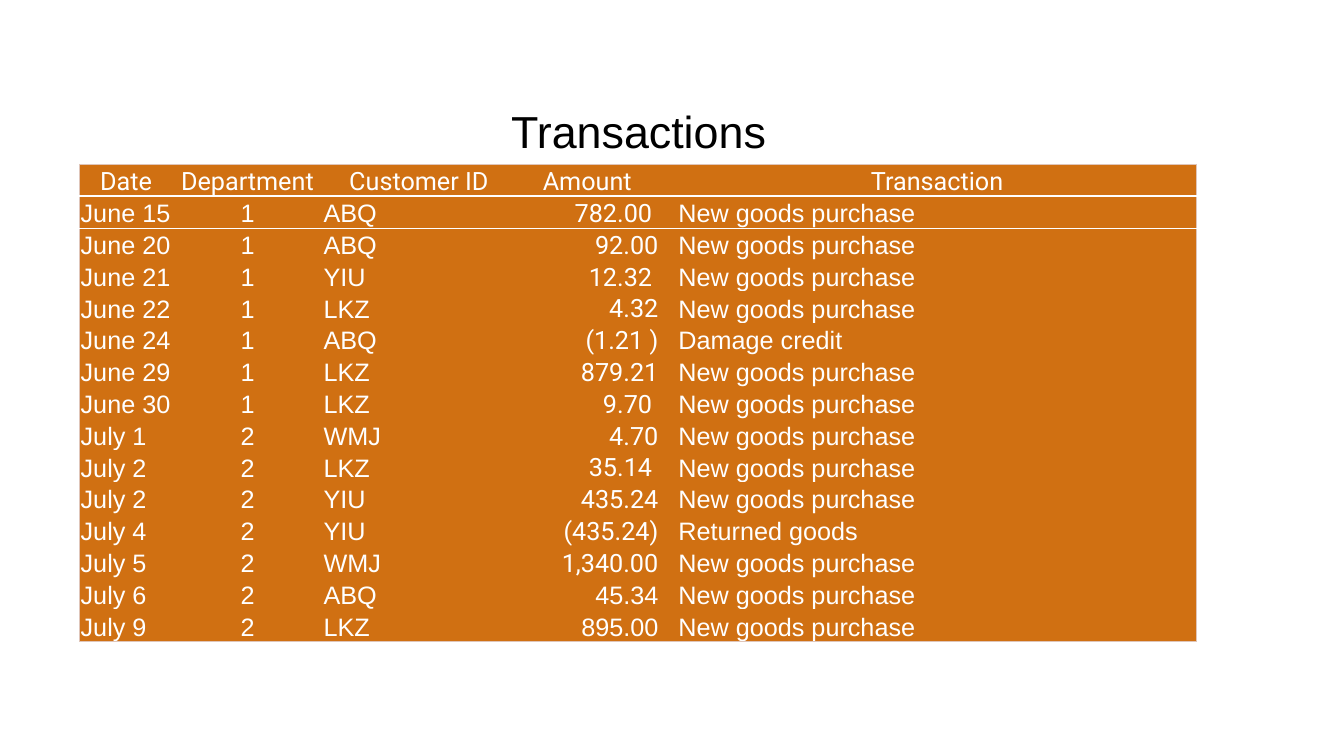
from lxml import etree
from pptx import Presentation
from pptx.dml.color import RGBColor
from pptx.enum.text import MSO_ANCHOR, MSO_AUTO_SIZE, PP_ALIGN as ALIGN
from pptx.oxml.ns import qn
from pptx.util import Inches, Pt

COLORS = {
    "orange": "D07012",
    "white": "FFFFFF",
    "frame": "DFC5B9",
    "black": "000000",
}


def write(frame, text, size=18, font="Arial", color="white", align=ALIGN.LEFT):
    paragraph = frame.paragraphs[0]
    paragraph.alignment = align
    paragraph.line_spacing = 0.9
    paragraph.font.size = Pt(size)
    if text:
        run = paragraph.add_run()
        run.text = text
        run.font.size = Pt(size)
        run.font.name = font
        run.font.color.rgb = RGBColor.from_string(COLORS[color])


def draw_border(cell, side, color=None, width=0):
    line = etree.SubElement(cell._tc.get_or_add_tcPr(), qn(f"a:ln{side}"), w=str(Pt(width)))
    if color:
        fill = etree.SubElement(line, qn("a:solidFill"))
        etree.SubElement(fill, qn("a:srgbClr"), val=COLORS[color])
    else:
        etree.SubElement(line, qn("a:noFill"))


headings = ("Date", "Department", "Customer ID", "Amount", "", "Transaction")
purchase = "New goods purchase"
transactions = [
    ("June 15", "1", "ABQ", "782.00 ", "", purchase),
    ("June 20", "1", "ABQ", "92.00", "", purchase),
    ("June 21", "1", "YIU", "12.32 ", "", purchase),
    ("June 22", "1", "LKZ", "4.32", "", purchase),
    ("June 24", "1", "ABQ", "(1.21 )", "", "Damage credit"),
    ("June 29", "1", "LKZ", "879.21", "", purchase),
    ("June 30", "1", "LKZ", "9.70 ", "", purchase),
    ("July 1", "2", "WMJ", "4.70", "", purchase),
    ("July 2", "2", "LKZ", "35.14 ", "", purchase),
    ("July 2", "2", "YIU", "435.24", "", purchase),
    ("July 4", "2", "YIU", "(435.24)", "", "Returned goods"),
    ("July 5", "2", "WMJ", "1,340.00", "", purchase),
    ("July 6", "2", "ABQ", "45.34", "", purchase),
    ("July 9", "2", "LKZ", "895.00", "", purchase),
]
rows = [headings] + transactions
column_widths = (0.92, 1.49, 1.91, 1.43, 0.18, 5.15)
alignments = (ALIGN.LEFT, ALIGN.CENTER, ALIGN.LEFT, ALIGN.RIGHT, ALIGN.LEFT, ALIGN.LEFT)
amount_column = headings.index("Amount")
last_row = len(rows) - 1
last_column = len(headings) - 1
arial_amounts = ("45.34", "895.00")

prs = Presentation()
prs.slide_width = Inches(13.33)
prs.slide_height = Inches(7.5)
slide = prs.slides.add_slide(prs.slide_layouts[6])

ledger = slide.shapes.add_table(
    len(rows), len(headings), Inches(0.79), Inches(1.63), Inches(11.08), Inches(4.6)
).table
ledger.first_row = False
ledger.horz_banding = False
for column, width in zip(ledger.columns, column_widths):
    column.width = Inches(width)

frame_line = ("frame", 0.75)
header_line = ("white", 1)
first_entry_line = ("white", 0.5)
row_lines = {0: frame_line, 1: header_line, 2: first_entry_line, last_row + 1: frame_line}

for r, entries in enumerate(rows):
    ledger.rows[r].height = Inches(4.6 / len(rows))
    for c, text in enumerate(entries):
        cell = ledger.cell(r, c)
        cell.margin_left = cell.margin_right = cell.margin_top = Inches(0.01)
        cell.margin_bottom = 0
        cell.vertical_anchor = MSO_ANCHOR.BOTTOM
        roboto = r == 0 or (c == amount_column and text not in arial_amounts)
        write(
            cell.text_frame,
            text,
            font="Roboto" if roboto else "Arial",
            align=ALIGN.CENTER if r == 0 else alignments[c],
        )
        draw_border(cell, "L", *(frame_line if c == 0 else ()))
        draw_border(cell, "R", *(frame_line if c == last_column else ()))
        draw_border(cell, "T", *row_lines.get(r, ()))
        draw_border(cell, "B", *row_lines.get(r + 1, ()))
        cell.fill.solid()
        cell.fill.fore_color.rgb = RGBColor.from_string(COLORS["orange"])

title = slide.shapes.add_textbox(Inches(4.96), Inches(1.04), Inches(2.75), Inches(0.59)).text_frame
title.word_wrap = False
title.auto_size = MSO_AUTO_SIZE.SHAPE_TO_FIT_TEXT
write(title, "Transactions", size=32, color="black", align=ALIGN.CENTER)

prs.save("out.pptx")
